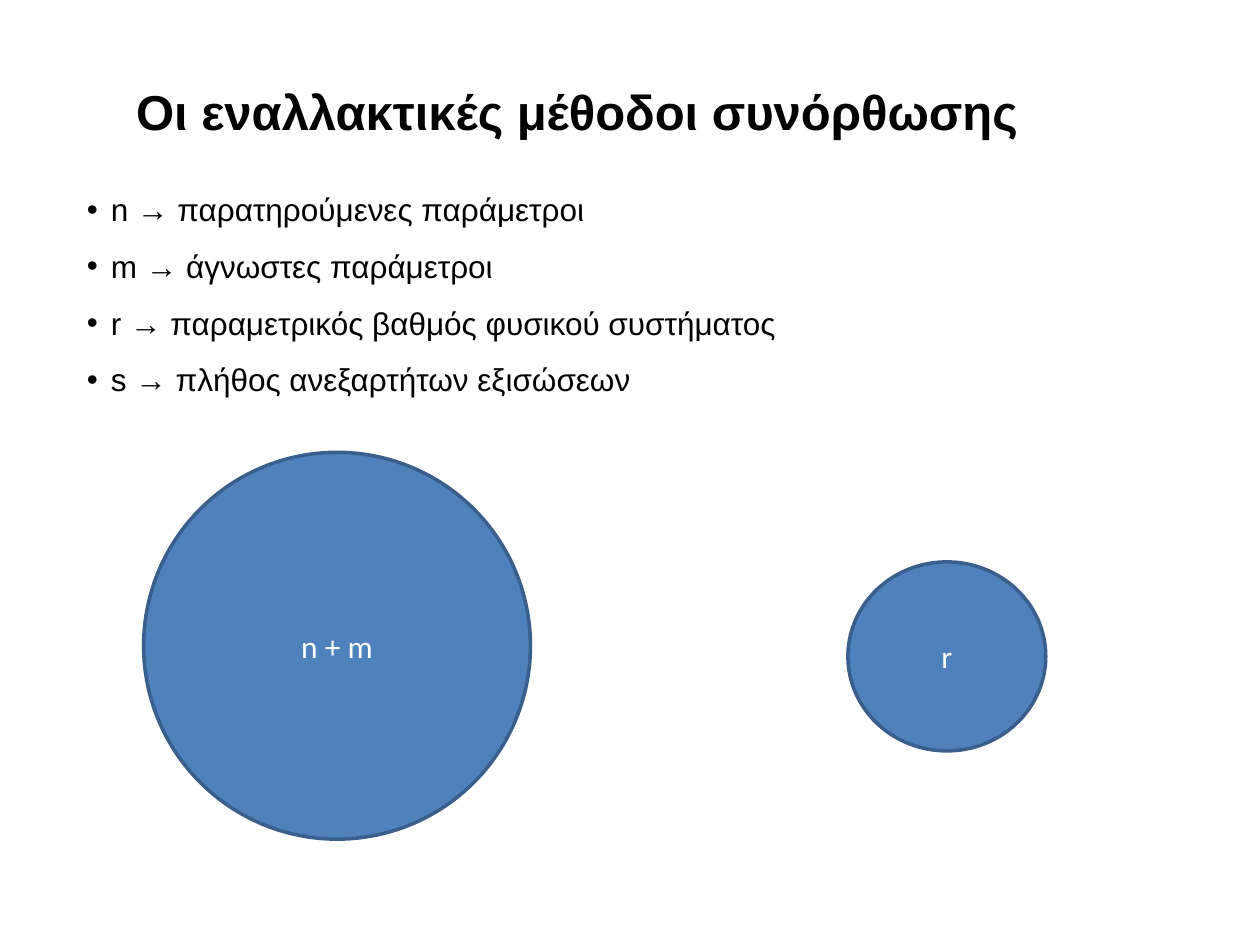
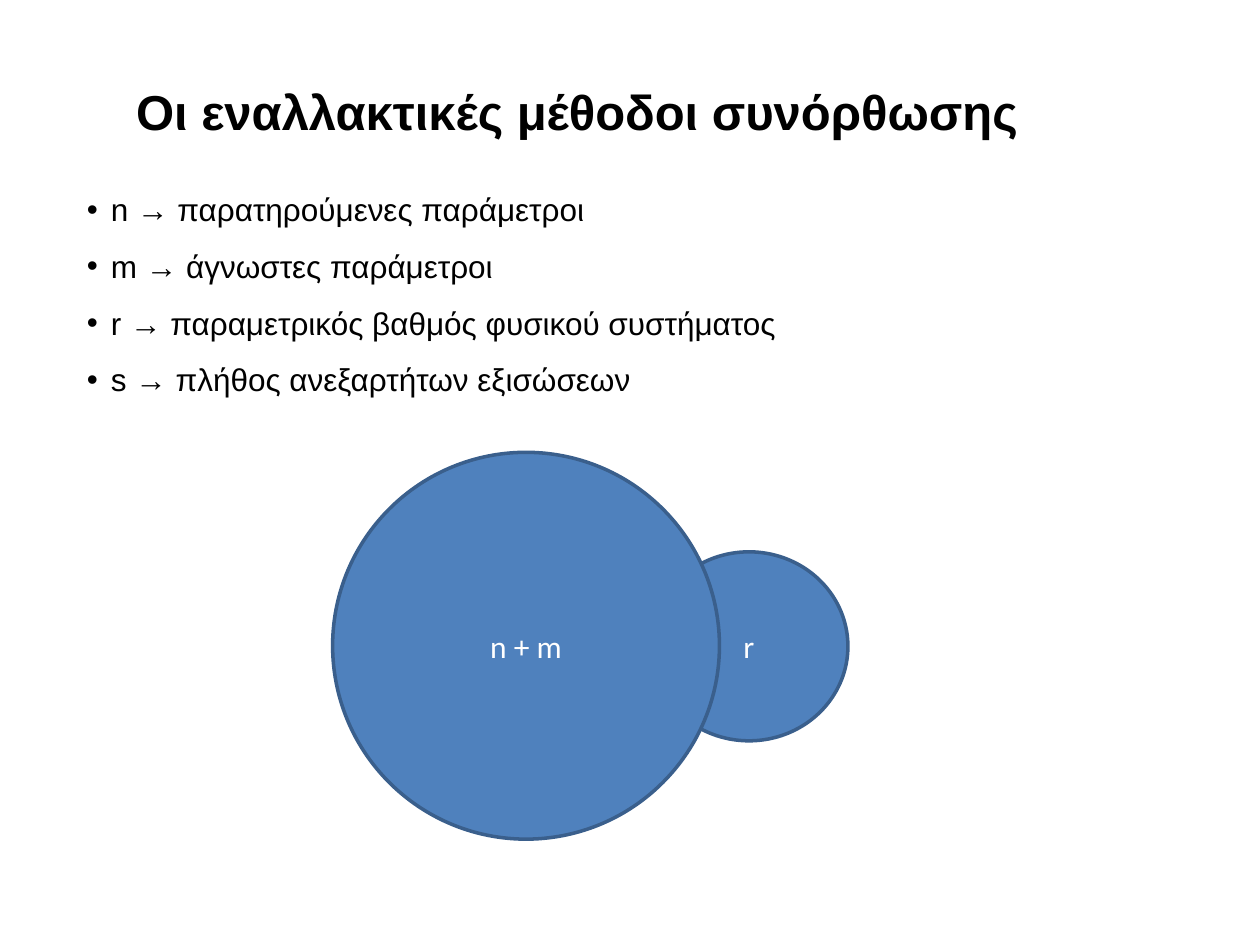
from dataclasses import dataclass

from pptx import Presentation
from pptx import util as u
from pptx.dml.color import RGBColor
from pptx.enum import shapes, text

BLACK = RGBColor(0x00, 0x00, 0x00)
WHITE = RGBColor(0xFF, 0xFF, 0xFF)
CIRCLE_FILL = RGBColor(0x4F, 0x81, 0xBD)
CIRCLE_LINE = RGBColor(0x3A, 0x5F, 0x8C)
TEXT_FONT = "Arial"
LABEL_FONT = "Calibri"
TITLE_AND_CONTENT = 1
BULLET_INDENT = u.Inches(0.19)

TITLE = "Οι εναλλακτικές μέθοδοι συνόρθωσης"
DEFINITIONS = (
    "n → παρατηρούμενες παράμετροι",
    "m → άγνωστες παράμετροι",
    "r → παραμετρικός βαθμός φυσικού συστήματος",
    "s → πλήθος ανεξαρτήτων εξισώσεων",
)


@dataclass(frozen=True)
class Circle:
    label: str
    left: float
    top: float
    width: float
    height: float


def rank_circle(left: float, top: float) -> Circle:
    return Circle("r", left, top, 1.57, 1.5)


def parameter_circle(left: float) -> Circle:
    return Circle("n + m", left, 3.59, 3.07, 3.07)


SLIDES = (
    (rank_circle(6.73, 4.46), parameter_circle(1.14)),
    (rank_circle(5.16, 4.38), parameter_circle(2.64)),
)


def place(shape, left: float, top: float, width: float, height: float) -> None:
    shape.left, shape.top = u.Inches(left), u.Inches(top)
    shape.width, shape.height = u.Inches(width), u.Inches(height)


def add_run(paragraph, words: str, size: int, font: str, color: RGBColor, bold: bool = False) -> None:
    run = paragraph.add_run()
    run.text = words
    run.font.size = u.Pt(size)
    run.font.name = font
    run.font.bold = bold
    run.font.color.rgb = color


def write_title(slide) -> None:
    shape = slide.shapes.title
    place(shape, 0.98, 0.6, 7.28, 0.57)
    frame = shape.text_frame
    frame.word_wrap = False
    frame.auto_size = text.MSO_AUTO_SIZE.SHAPE_TO_FIT_TEXT
    frame.vertical_anchor = text.MSO_ANCHOR.TOP
    paragraph = frame.paragraphs[0]
    paragraph.alignment = text.PP_ALIGN.LEFT
    add_run(paragraph, TITLE, 28, TEXT_FONT, BLACK, bold=True)


def write_definitions(slide) -> None:
    shape = slide.placeholders[1]
    place(shape, 0.59, 1.31, 8.66, 1.92)
    frame = shape.text_frame
    frame.auto_size = text.MSO_AUTO_SIZE.SHAPE_TO_FIT_TEXT
    for index, definition in enumerate(DEFINITIONS):
        paragraph = frame.add_paragraph() if index else frame.paragraphs[0]
        paragraph.line_spacing = 1.5
        paragraph.space_before = u.Pt(0)
        properties = paragraph._p.get_or_add_pPr()
        properties.set("marL", str(BULLET_INDENT))
        properties.set("indent", str(-BULLET_INDENT))
        add_run(paragraph, definition, 18, TEXT_FONT, BLACK)


def draw_circle(slide, circle: Circle) -> None:
    shape = slide.shapes.add_shape(
        shapes.MSO_SHAPE.OVAL,
        u.Inches(circle.left), u.Inches(circle.top),
        u.Inches(circle.width), u.Inches(circle.height),
    )
    shape.shadow.inherit = False
    shape.fill.solid()
    shape.fill.fore_color.rgb = CIRCLE_FILL
    shape.line.color.rgb = CIRCLE_LINE
    shape.line.width = u.Pt(2)
    shape.text_frame.vertical_anchor = text.MSO_ANCHOR.MIDDLE
    paragraph = shape.text_frame.paragraphs[0]
    paragraph.alignment = text.PP_ALIGN.CENTER
    add_run(paragraph, circle.label, 18, LABEL_FONT, WHITE)


def main() -> None:
    presentation = Presentation()
    presentation.slide_width, presentation.slide_height = u.Inches(10), u.Inches(7.5)
    for circles in SLIDES:
        slide = presentation.slides.add_slide(presentation.slide_layouts[TITLE_AND_CONTENT])
        write_title(slide)
        write_definitions(slide)
        for circle in circles:
            draw_circle(slide, circle)
    presentation.save("out.pptx")


if __name__ == "__main__":
    main()
